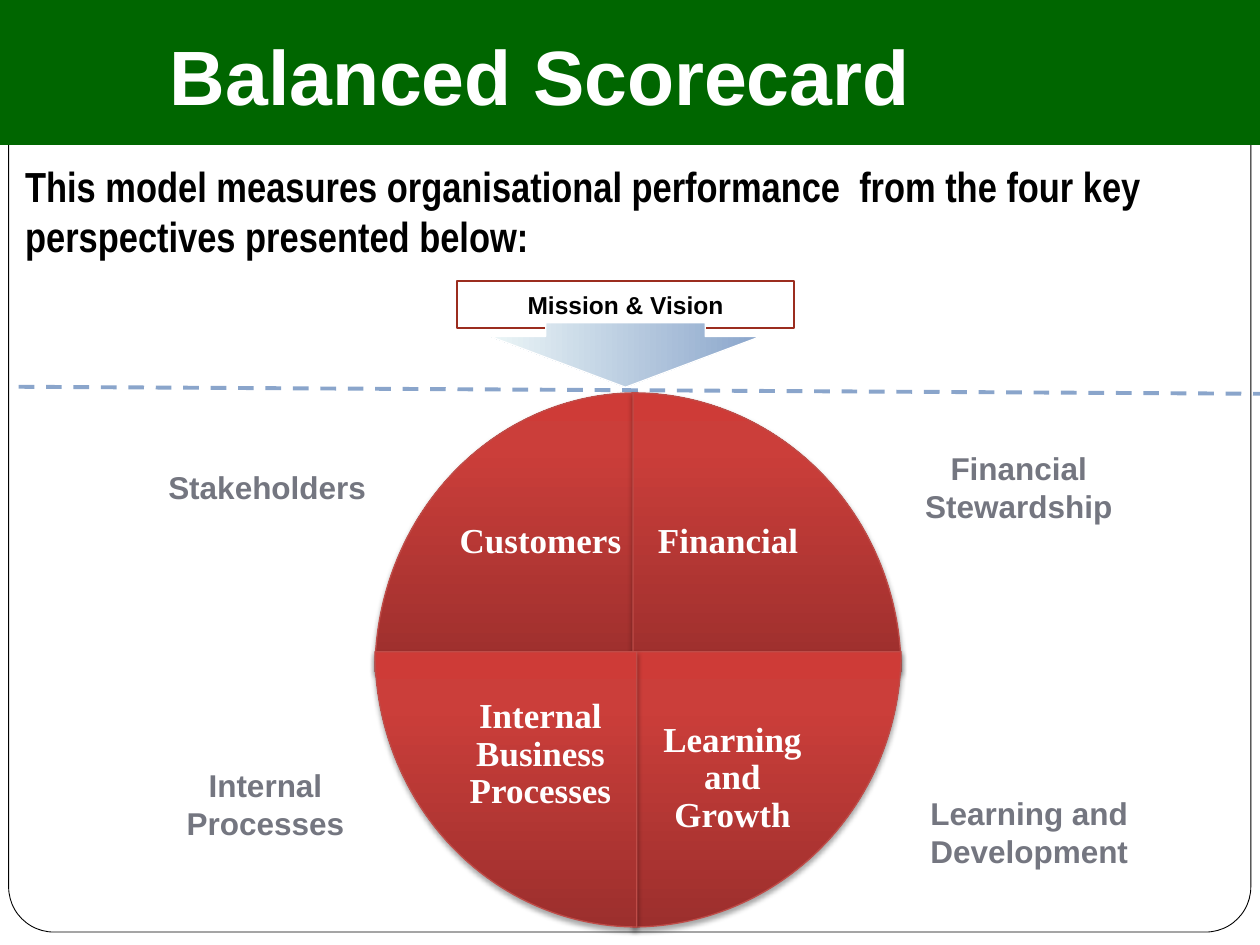
from math import cos, pi, sin, tan

from lxml.etree import SubElement
from pptx import Presentation
from pptx.dml.color import RGBColor
from pptx.enum.dml import MSO_LINE
from pptx.enum.shapes import MSO_CONNECTOR, MSO_SHAPE
from pptx.enum.text import MSO_ANCHOR, PP_ALIGN
from pptx.oxml.ns import qn
from pptx.util import Pt

QUARTER_STOPS = [(0, "9C2F2D"), (80, "CB3E3A"), (100, "CE3B37")]
ARROW_STOPS = [(0, "8AA5CB"), (100, "ECF6F7")]


def color(value):
    """Turn a hex string into a colour."""
    return RGBColor.from_string(value)


def write(shape, text, size, font="Arial", fill="000000", align=PP_ALIGN.CENTER,
          anchor=MSO_ANCHOR.TOP, insets=(7.2, 3.6, 7.2, 3.6), wrap=True, spacing=None):
    """Put one bold paragraph into a shape."""
    frame = shape.text_frame
    frame.word_wrap = wrap
    frame.vertical_anchor = anchor
    frame.margin_left, frame.margin_top, frame.margin_right, frame.margin_bottom = map(Pt, insets)
    paragraph = frame.paragraphs[0]
    paragraph.alignment = align
    paragraph.line_spacing = spacing
    run = paragraph.add_run()
    run.text = text
    run.font.size = Pt(size)
    run.font.name = font
    run.font.bold = True
    run.font.color.rgb = color(fill)


def add_text(slide, box, text, size, **style):
    """Add a text box holding one paragraph."""
    write(slide.shapes.add_textbox(*map(Pt, box)), text, size, **style)


def outline(shape, line, width):
    """Remove the shadow and set the outline, if any."""
    shape.shadow.inherit = False
    if line is None:
        shape.line.fill.background()
    else:
        shape.line.color.rgb = color(line)
        shape.line.width = Pt(width)


def add_box(slide, kind, box, fill, line=None, width=0.5):
    """Add a preset shape with a plain fill."""
    shape = slide.shapes.add_shape(kind, *map(Pt, box))
    shape.fill.solid()
    shape.fill.fore_color.rgb = color(fill)
    outline(shape, line, width)
    return shape


def fill_gradient(shape, stops, angle):
    """Fill a shape with a linear gradient."""
    shape.fill.gradient()
    shape.fill.gradient_angle = angle
    stop_list = shape.element.spPr.find(qn("a:gradFill")).find(qn("a:gsLst"))
    for stop in list(stop_list):
        stop_list.remove(stop)
    for position, value in stops:
        stop = SubElement(stop_list, qn("a:gs"), pos=str(position * 1000))
        SubElement(stop, qn("a:srgbClr"), val=value)


def add_shadow(shape):
    """Give a shape a soft shadow below it."""
    effects = shape.element.spPr.find(qn("a:effectLst"))
    shadow = SubElement(effects, qn("a:outerShdw"), blurRad=str(Pt(3.1)), dist=str(Pt(1.8)),
                        dir="5400000", rotWithShape="0")
    shade = SubElement(shadow, qn("a:srgbClr"), val="000000")
    SubElement(shade, qn("a:alpha"), val="35000")


def add_header(slide, left, top, width, height):
    """Draw the title band."""
    add_box(slide, MSO_SHAPE.RECTANGLE, (left, top, width, height), "006600")
    add_text(slide, (left + 2.7, top - 12, 612, 90), "Balanced Scorecard", 44, fill="FFFFFF",
             anchor=MSO_ANCHOR.BOTTOM, insets=(7.2, 3.6, 7.2, 7.2))


def add_mission(slide, left, top, width, height):
    """Draw the mission box, its arrow and the dashed divider."""
    mission = add_box(slide, MSO_SHAPE.RECTANGLE, (left, top, width, height), "FFFFFF", "9B2D1F", 1)
    write(mission, "Mission & Vision", 14, anchor=MSO_ANCHOR.MIDDLE, insets=(0, 0, 0, 0), wrap=False)
    arrow = add_box(slide, MSO_SHAPE.RIGHT_ARROW, (left + 77.7, top - 35, 36.8, 154.8),
                    "FFFFFF", "FFFFFF", 0.75)
    arrow.adjustments[0], arrow.adjustments[1] = 0.589, 0.789
    arrow.rotation = 90
    fill_gradient(arrow, ARROW_STOPS, 270)
    divider = slide.shapes.add_connector(
        MSO_CONNECTOR.STRAIGHT, Pt(772), Pt(top + 64.8), Pt(8), Pt(top + 60.5))
    divider.line.color.rgb = color("8AA5CB")
    divider.line.width = Pt(2.25)
    divider.line.dash_style = MSO_LINE.DASH
    SubElement(divider.element.spPr, qn("a:effectLst"))


def quarter_arc(pieces=2):
    """List the Bezier points of a unit quarter circle after its start."""
    sweep = pi / 2 / pieces
    reach = 4 / 3 * tan(sweep / 4)
    points = []
    for piece in range(pieces):
        start, end = piece * sweep, (piece + 1) * sweep
        points += [
            (cos(start) - reach * sin(start), sin(start) + reach * cos(start)),
            (cos(end) + reach * sin(end), sin(end) - reach * cos(end)),
            (cos(end), sin(end)),
        ]
    return points


def curve_segments(shape, count):
    """Merge the first lines of an outline, three at a time, into curves."""
    lines = list(shape.element.iter(qn("a:lnTo")))[:count]
    for first in range(0, count, 3):
        group = lines[first:first + 3]
        curve = group[0].makeelement(qn("a:cubicBezTo"))
        group[0].addprevious(curve)
        for line in group:
            curve.append(line[0])
            line.getparent().remove(line)


def add_quarter(slide, text, center, radii, insets, anchor):
    """Draw a quarter ellipse whose signed radii point outwards from its centre."""
    (x, y), (across, down) = center, radii
    arc = [(Pt(x + across * u), Pt(y + down * v)) for u, v in quarter_arc()]
    builder = slide.shapes.build_freeform(Pt(x + across), Pt(y))
    builder.add_line_segments(arc + [(Pt(x), Pt(y))], close=True)
    quarter = builder.convert_to_shape()
    curve_segments(quarter, len(arc))
    outline(quarter, "BF4C48", 0.75)
    fill_gradient(quarter, QUARTER_STOPS, 90)
    add_shadow(quarter)
    write(quarter, text, 20, font="Times New Roman", fill="FFFFFF", anchor=anchor,
          insets=insets, spacing=0.9)


def add_scorecard(slide, left, top, width, height):
    """Draw the four perspectives as a quartered ellipse."""
    left_width, right_width, upper, lower = 149.6, 153.2, 159.2, 157.2
    left_x, right_x = left + left_width, left + width - right_width
    upper_y, lower_y = top + upper, top + height - lower
    near, far = 8, 47.5
    quarters = [
        ("Customers", (left_x, upper_y), (-left_width, -upper), (far, 74.5, near, near), MSO_ANCHOR.TOP),
        ("Financial", (right_x, upper_y), (right_width, -upper), (near, 74.5, far + 5, near), MSO_ANCHOR.TOP),
        ("Learning and Growth", (right_x, lower_y), (right_width, lower),
         (near, 35, far, far), MSO_ANCHOR.MIDDLE),
        ("Internal Business Processes", (left_x, lower_y), (-left_width, lower),
         (far, near, near, far), MSO_ANCHOR.MIDDLE),
    ]
    for quarter in quarters:
        add_quarter(slide, *quarter)


def add_labels(slide, left, top):
    """Place the outer labels around the scorecard."""
    labels = [
        ("Stakeholders", 1, 11, 29),
        ("Internal Processes", 0, 181.2, 51),
        ("Learning and Development", 436.5, 197, 51),
        ("Financial Stewardship", 430.5, 0, 51),
    ]
    for text, across, down, height in labels:
        add_text(slide, (left + across, top + down, 147, height), text, 18, fill="747680")


def main():
    """Build and save the slide."""
    presentation = Presentation()
    presentation.slide_width, presentation.slide_height = Pt(720), Pt(540)
    slide = presentation.slides.add_slide(presentation.slide_layouts[6])
    frame = add_box(slide, MSO_SHAPE.ROUNDED_RECTANGLE, (5, 5.6, 709.8, 527), "FFFFFF", "000000")
    frame.adjustments[0] = 0.049
    add_header(slide, 0, -1.5, 720, 84.3)
    add_mission(slide, 261.3, 160.5, 192.4, 26.8)
    add_scorecard(slide, 214.3, 224.5, 300.6, 305.2)
    add_labels(slide, 78.2, 253)
    add_text(slide, (7.3, 88, 704, 65.5),
             "This model measures organisational performance  from the four key perspectives presented below:",
             24, font="Arial Narrow", align=PP_ALIGN.LEFT)
    presentation.save("out.pptx")


if __name__ == "__main__":
    main()
